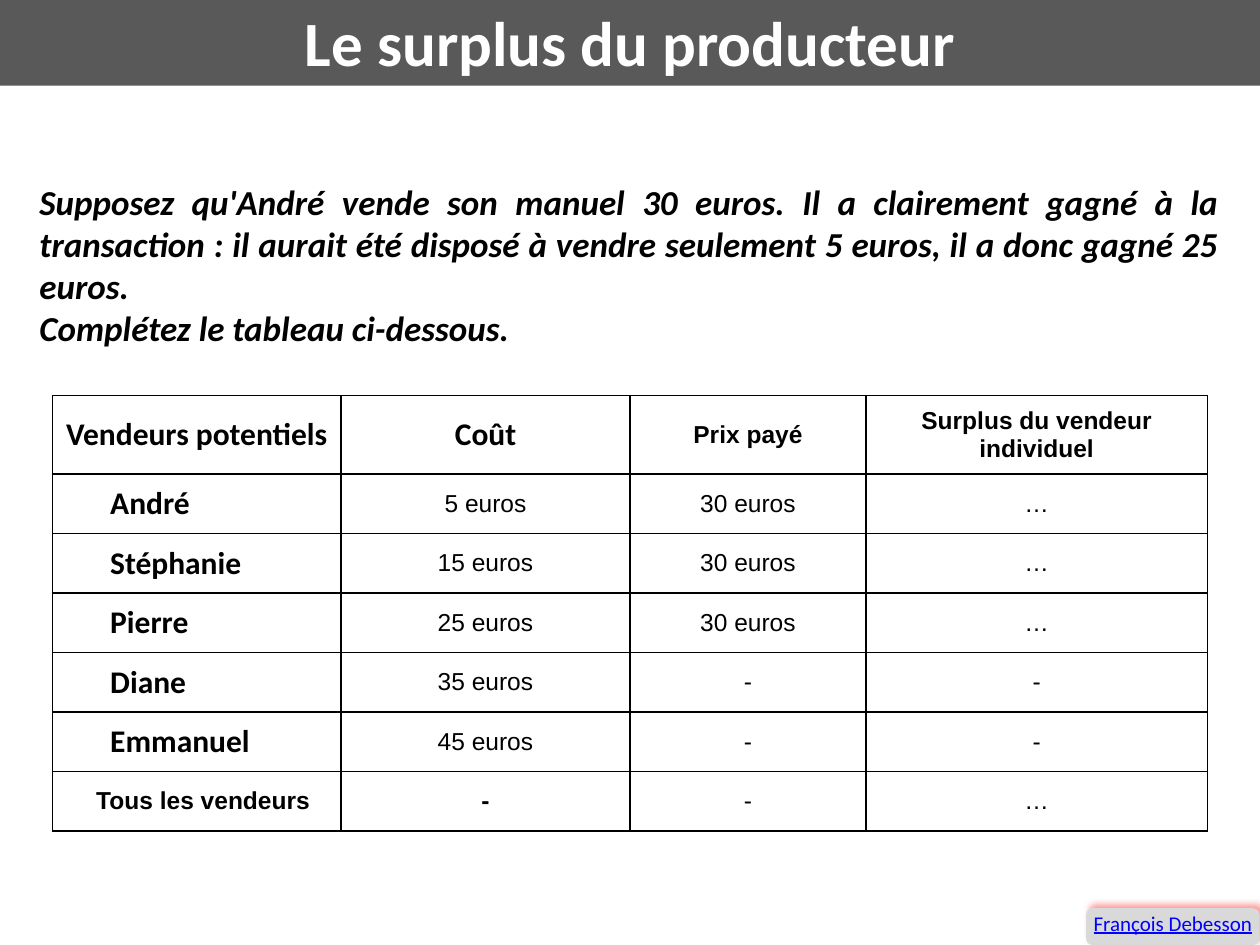
from dataclasses import dataclass
from lxml.etree import SubElement as Sub
from pptx import Presentation
from pptx.dml.color import RGBColor as Rgb
from pptx.enum.shapes import MSO_SHAPE as Shape
from pptx.enum.text import MSO_ANCHOR as Anchor, PP_ALIGN as Align
from pptx.oxml.ns import qn
from pptx.util import Pt

TITLE = "Le surplus du producteur"
INTRO = [
    "Supposez qu'André vende son manuel 30 euros. Il a clairement gagné à la "
    "transaction : il aurait été disposé à vendre seulement 5 euros, il a donc "
    "gagné 25 euros.",
    "Complétez le tableau ci-dessous.",
]
AUTHOR = "François Debesson"
HEADS = ["Vendeurs potentiels", "Coût", "Prix payé", "Surplus du vendeur\nindividuel"]
SELLERS = [
    ["André", "5 euros", "30 euros", "…"],
    ["Stéphanie", "15 euros", "30 euros", "…"],
    ["Pierre", "25 euros", "30 euros", "…"],
    ["Diane", "35 euros", "-", "-"],
    ["Emmanuel", "45 euros", "-", "-"],
]
TOTAL = ["Tous les vendeurs", "-", "-", "…"]
COLS = [165, 165, 135, 195]
ROWS = [45] + [34] * (len(SELLERS) + 1)


@dataclass(frozen=True)
class Theme:
    sans: str = "Calibri"
    plain: str = "Arial"
    ink: str = "000000"
    white: str = "FFFFFF"
    band: str = "595959"
    badge: str = "D9D9D9"
    glow: str = "FF0000"
    link: str = "0000FF"
    title: int = 36
    intro: int = 20
    name: int = 18
    cell: int = 14
    small: int = 12


T = Theme()


def write(frame, lines, size, face=T.sans, color=T.ink, align=Align.CENTER,
          bold=False, italic=False, line=False, indent=0):
    frame.word_wrap = True
    for i, text in enumerate(lines):
        para = frame.paragraphs[0] if i == 0 else frame.add_paragraph()
        para.alignment = align
        if indent:
            para._p.get_or_add_pPr().set("marL", str(Pt(indent)))
        run = para.add_run()
        run.text = text
        font = run.font
        font.size, font.name = Pt(size), face
        font.bold, font.italic, font.underline = bold, italic, line
        font.color.rgb = Rgb.from_string(color)


def pad(frame, gap):
    frame.margin_left = frame.margin_right = Pt(gap)
    frame.margin_top = frame.margin_bottom = Pt(gap)


def block(slide, kind, box, fill):
    shape = slide.shapes.add_shape(kind, *map(Pt, box))
    shape.shadow.inherit = False
    shape.fill.solid()
    shape.fill.fore_color.rgb = Rgb.from_string(fill)
    shape.line.fill.background()
    return shape


def glow(shape):
    effects = shape._element.spPr.find(qn("a:effectLst"))
    outer = Sub(effects, qn("a:outerShdw"), blurRad=str(Pt(4)), dist=str(Pt(3)),
                dir=str(315 * 60000), algn="bl", rotWithShape="0")
    color = Sub(outer, qn("a:srgbClr"), val=T.glow)
    Sub(color, qn("a:alpha"), val="40000")


def border(cell):
    props = cell._tc.get_or_add_tcPr()
    for side in ("lnL", "lnR", "lnT", "lnB"):
        edge = Sub(props, qn(f"a:{side}"), w=str(Pt(1)))
        Sub(Sub(edge, qn("a:solidFill")), qn("a:srgbClr"), val=T.ink)


def style(row, col):
    last = len(ROWS) - 1
    named = (row == 0 and col < 2) or (0 < row < last and col == 0)
    look = dict(size=T.name if named else T.cell,
                face=T.sans if named else T.plain,
                bold=row == 0 or col == 0 or (row == last and col == 1))
    if row and col == 0:
        look.update(align=Align.LEFT, indent=20 if row == last else 28)
    return look


def grid(slide):
    data = [HEADS, *SELLERS, TOTAL]
    box = (30, 226, sum(COLS), sum(ROWS))
    table = slide.shapes.add_table(len(ROWS), len(COLS), *map(Pt, box)).table
    table.first_row = table.horz_banding = False
    for col, width in zip(table.columns, COLS):
        col.width = Pt(width)
    for row, height in zip(table.rows, ROWS):
        row.height = Pt(height)
    for r, texts in enumerate(data):
        for c, text in enumerate(texts):
            cell = table.cell(r, c)
            cell.vertical_anchor = Anchor.MIDDLE
            cell.margin_left = cell.margin_right = Pt(5)
            cell.margin_top = cell.margin_bottom = Pt(0)
            border(cell)
            cell.fill.background()
            write(cell.text_frame, text.split("\n"), **style(r, c))


def main():
    deck = Presentation()
    deck.slide_width, deck.slide_height = Pt(720), Pt(540)
    slide = deck.slides.add_slide(deck.slide_layouts[6])

    band = block(slide, Shape.RECTANGLE, (0, -2, 720, 51), T.band).text_frame
    pad(band, 3)
    band.vertical_anchor = Anchor.MIDDLE
    write(band, [TITLE], T.title, color=T.white, bold=True)

    intro = slide.shapes.add_textbox(*map(Pt, (19.5, 100, 680, 103))).text_frame
    pad(intro, 3)
    write(intro, INTRO, T.intro, align=Align.JUSTIFY, bold=True, italic=True)

    grid(slide)

    badge = block(slide, Shape.ROUNDED_RECTANGLE, (620.7, 519, 99, 21), T.badge)
    glow(badge)
    pad(badge.text_frame, 0)
    badge.text_frame.vertical_anchor = Anchor.TOP
    write(badge.text_frame, [AUTHOR], T.small, color=T.link, line=True)

    deck.save("out.pptx")


if __name__ == "__main__":
    main()
